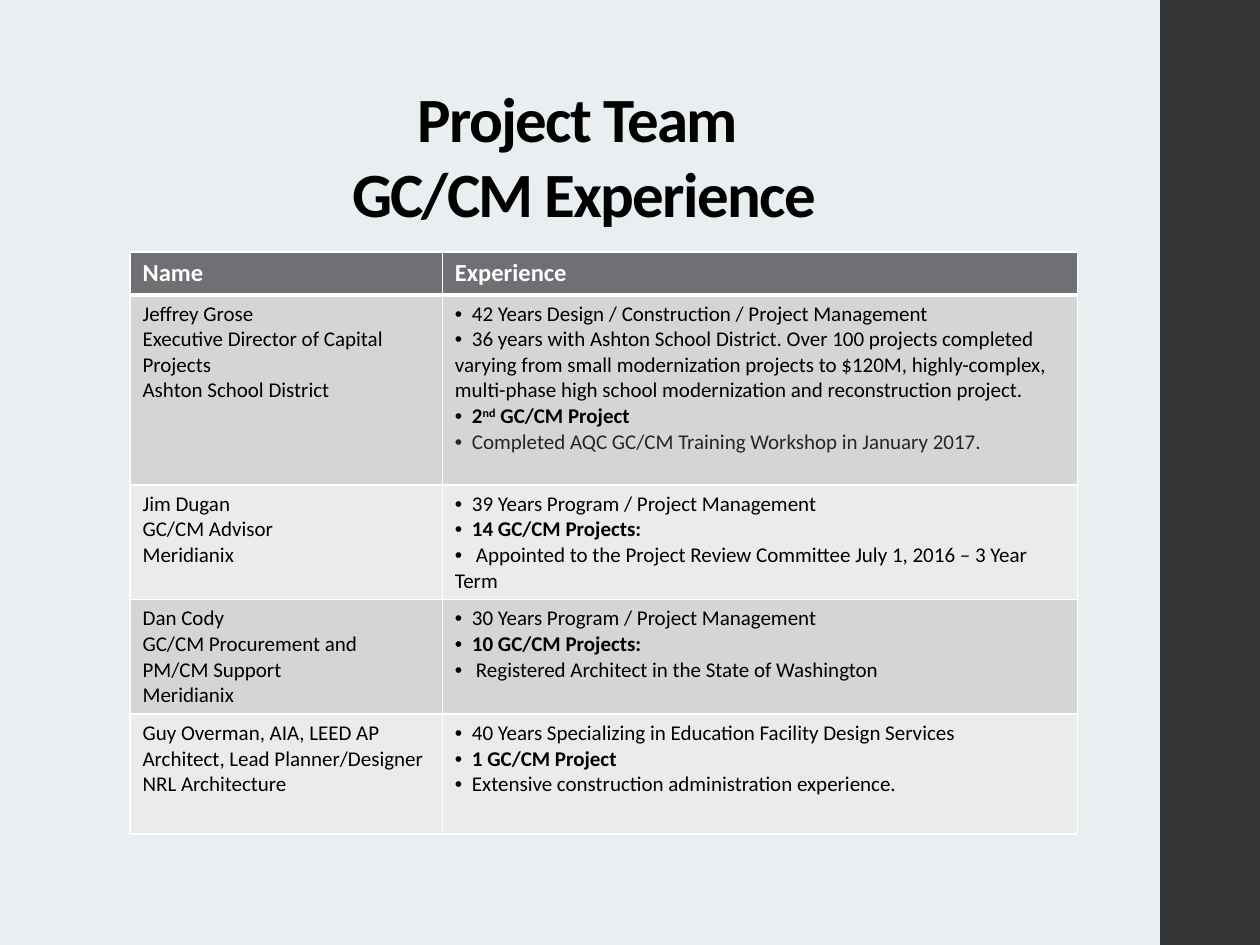
from pptx import Presentation
from pptx.dml.color import RGBColor
from pptx.enum.shapes import MSO_SHAPE
from pptx.enum.text import MSO_ANCHOR, PP_ALIGN
from pptx.oxml.ns import qn
from pptx.util import Pt
from lxml import etree

RECTANGLE = MSO_SHAPE.RECTANGLE
TOP = MSO_ANCHOR.TOP
CENTER = PP_ALIGN.CENTER
FONT = "Calibri"
WHITE, BLACK, GRAY = "FFFFFF", "000000", "262626"
HEADER_FILL, ROW_FILLS = "6F6F74", ("D5D5D6", "EBEBEB")
COLUMN_WIDTHS = (178.5, 362.9)
ROW_HEIGHTS = (24.5, 108.7, 65.5, 65.5, 68.4)
BULLET_GAP = 9.7

TITLE = ("Project Team ", "GC/CM Experience")
HEADINGS = ("Name", "Experience")
TEAM = (
    (("Jeffrey Grose", "Executive Director of Capital Projects", "Ashton School District"),
     (("42 Years Design / Construction / Project Management", {}),
      ("36 years with Ashton School District. Over 100 projects completed varying from "
       "small modernization projects to $120M, highly-complex, multi-phase high school "
       "modernization and reconstruction project.", {}),
      ("2|nd| GC/CM Project", {"bold": True}),
      ("Completed AQC GC/CM Training Workshop in January 2017.", {"color": GRAY}))),
    (("Jim Dugan", "GC/CM Advisor", "Meridianix"),
     (("39 Years Program / Project Management", {}),
      ("14 GC/CM Projects:", {"bold": True}),
      ("Appointed to the Project Review Committee July 1, 2016 – 3 Year Term", {"gap": 12}))),
    (("Dan Cody", "GC/CM Procurement and", "PM/CM Support", "Meridianix"),
     (("30 Years Program / Project Management", {}),
      ("10 GC/CM Projects:", {"bold": True}),
      ("Registered Architect in the State of Washington", {"gap": 12}))),
    (("Guy Overman, AIA, LEED AP", "Architect, Lead Planner/Designer", "NRL Architecture"),
     (("40 Years Specializing in Education Facility Design Services", {}),
      ("1 GC/CM Project", {"bold": True}),
      ("Extensive construction administration experience.", {}))),
)


def paint(fill, color):
    """Give a fill one solid colour."""
    fill.solid()
    fill.fore_color.rgb = RGBColor.from_string(color)


def style(font, size, color=BLACK, bold=False):
    """Set the typeface, size, colour and weight of a font."""
    font.name, font.size, font.bold = FONT, Pt(size), bold
    font.color.rgb = RGBColor.from_string(color)


def add_paragraphs(frame, count):
    """Return the given number of paragraphs of an empty text frame."""
    return [frame.paragraphs[0]] + [frame.add_paragraph() for _ in range(count - 1)]


def add_bullet(para, gap):
    """Put a bullet before a paragraph, with a tab stop for its text."""
    properties = para._p.get_or_add_pPr()
    properties.set("marL", "0")
    properties.set("indent", "0")
    bullet_font = etree.Element(qn("a:buFont"), typeface="Arial")
    bullet = etree.Element(qn("a:buChar"), char="•")
    tabs = etree.Element(qn("a:tabLst"))
    etree.SubElement(tabs, qn("a:tab"), pos=str(Pt(gap)), algn="l")
    for position, element in enumerate((bullet_font, bullet, tabs)):
        properties.insert(position, element)


def add_borders(cell, bottom_width):
    """Draw white lines around a cell."""
    properties = cell._tc.get_or_add_tcPr()
    widths = {"a:lnL": 1, "a:lnR": 1, "a:lnT": 1, "a:lnB": bottom_width}
    for position, (tag, width) in enumerate(widths.items()):
        line = etree.Element(qn(tag), w=str(Pt(width)))
        fill = etree.SubElement(line, qn("a:solidFill"))
        etree.SubElement(fill, qn("a:srgbClr"), val=WHITE)
        properties.insert(position, line)


def format_cell(cell, fill, top_width, bottom_width):
    """Set the fill, margins and borders of a table cell."""
    paint(cell.fill, fill)
    cell.margin_left = cell.margin_right = Pt(7.2)
    cell.margin_top = cell.margin_bottom = Pt(3.6)
    add_borders(cell, bottom_width)
    cell._tc.tcPr.find(qn("a:lnT")).set("w", str(Pt(top_width)))


def fill_experience(cell, items):
    """Write the bulleted experience of one team member."""
    paras = add_paragraphs(cell.text_frame, len(items))
    for para, (text, look) in zip(paras, items):
        style(para.font, 12, look.get("color", BLACK), look.get("bold", False))
        add_bullet(para, look.get("gap", BULLET_GAP))
        for index, part in enumerate(("\t" + text).split("|")):
            span = para.add_run()
            span.text = part
            if index == 1:
                span.font._element.set("baseline", "30000")


def add_side_band(page, left, top, width, height):
    """Draw the dark band at the right edge."""
    band = page.shapes.add_shape(RECTANGLE, Pt(left), Pt(top), Pt(width), Pt(height))
    band.shadow.inherit = False
    paint(band.fill, "353537")
    band.line.fill.background()


def add_title(page, left, top, width, height):
    """Write the centred title."""
    box = page.shapes.add_textbox(Pt(left), Pt(top), Pt(width), Pt(height))
    frame = box.text_frame
    frame.word_wrap = True
    frame.vertical_anchor = TOP
    frame.margin_top = Pt(5)
    for para, text in zip(add_paragraphs(frame, len(TITLE)), TITLE):
        para.alignment = CENTER
        style(para.font, 36, BLACK, True)
        span = para.add_run()
        span.text = text
        span.font._element.set("spc", "-100")


def add_team_table(page, left, top):
    """Build the table of team members and their experience."""
    holder = page.shapes.add_table(len(ROW_HEIGHTS), len(COLUMN_WIDTHS), Pt(left), Pt(top),
                                   Pt(sum(COLUMN_WIDTHS)), Pt(sum(ROW_HEIGHTS)))
    table = holder.table
    for column, width in zip(table.columns, COLUMN_WIDTHS):
        column.width = Pt(width)
    for row, height in zip(table.rows, ROW_HEIGHTS):
        row.height = Pt(height)
    for cell, heading in zip(table.rows[0].cells, HEADINGS):
        format_cell(cell, HEADER_FILL, 1, 3)
        cell.text = heading
        style(cell.text_frame.paragraphs[0].font, 14, WHITE, True)
    for index, (person, experience) in enumerate(TEAM):
        name_cell, experience_cell = table.rows[index + 1].cells
        for cell in (name_cell, experience_cell):
            format_cell(cell, ROW_FILLS[index % 2], 3 if index == 0 else 1, 1)
        for para, text in zip(add_paragraphs(name_cell.text_frame, len(person)), person):
            para.text = text
            style(para.font, 12)
        fill_experience(experience_cell, experience)


def main():
    """Build the slide and save the deck."""
    deck = Presentation()
    deck.slide_width, deck.slide_height = Pt(720), Pt(540)
    page = deck.slides.add_slide(deck.slide_layouts[6])
    paint(page.background.fill, "E9EEF1")
    add_side_band(page, 663, 0, 57, 540)
    add_title(page, 33.8, 40.3, 599.8, 107.3)
    add_team_table(page, 74.3, 144)
    deck.save("out.pptx")


if __name__ == "__main__":
    main()
